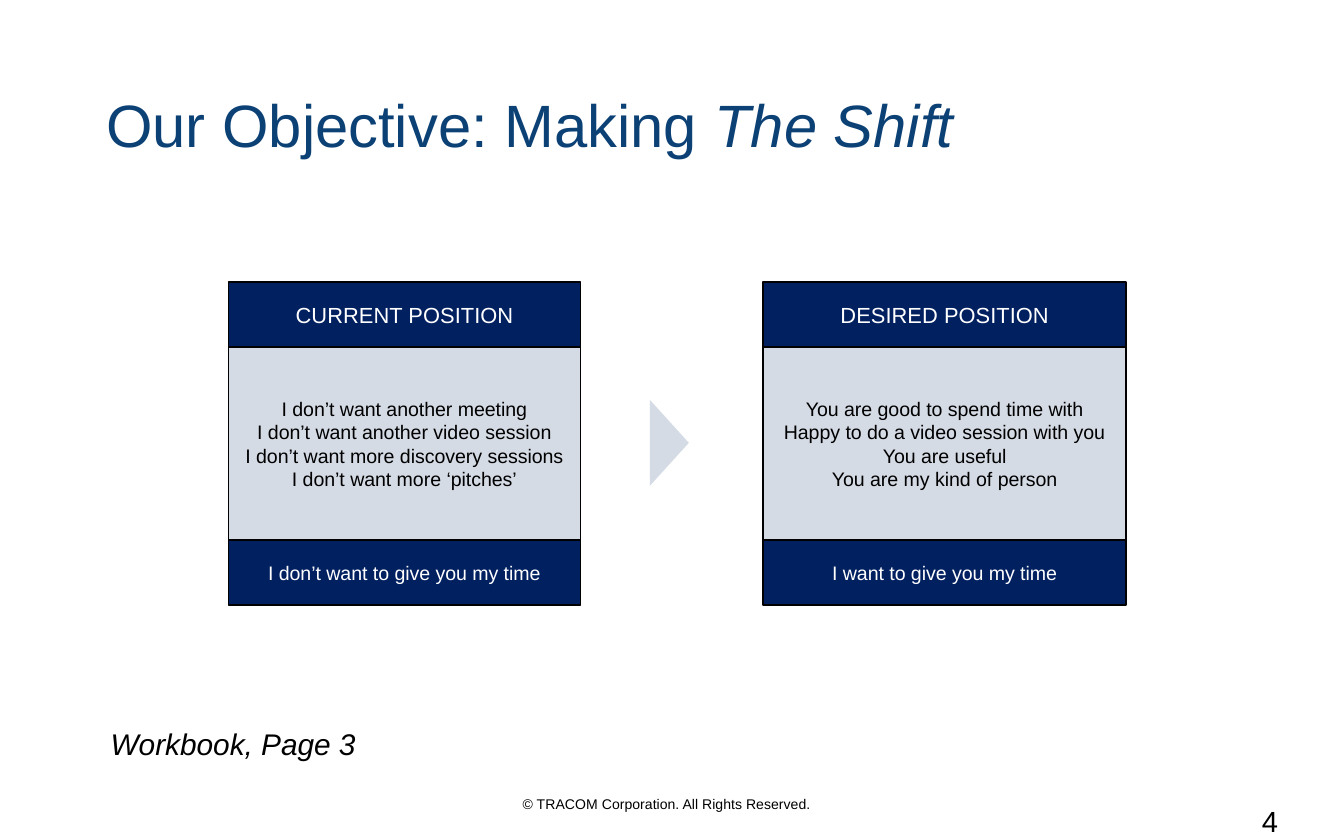
from pptx import Presentation
from pptx import util as u
from pptx.dml.color import RGBColor
from pptx.enum import shapes, text

WIDE, HIGH = 10, 6.25
HUES = {"title": "0C4176", "navy": "002060", "pale": "D5DBE5",
        "ink": "000000", "white": "FFFFFF"}
ROWS = (1, 3, 1)  # shares of a card: head, body, foot
CARDS = (
    ((1.7, 2.1, 2.62, 2.4),
     ("CURRENT POSITION",
      "I don’t want another meeting\n"
      "I don’t want another video session\n"
      "I don’t want more discovery sessions\n"
      "I don’t want more ‘pitches’",
      "I don’t want to give you my time")),
    ((5.68, 2.1, 2.7, 2.4),
     ("DESIRED POSITION",
      "You are good to spend time with\n"
      "Happy to do a video session with you\n"
      "You are useful\n"
      "You are my kind of person",
      "I want to give you my time")),
)


def hue(name):
    return RGBColor.from_string(HUES[name])


def place(box):
    return [u.Inches(n) for n in box]


def style(frame, size, color, align=text.PP_ALIGN.CENTER, italic=None):
    for para in frame.paragraphs:
        para.alignment = align
        for run in para.runs:
            font = run.font
            font.name, font.size = "Arial", u.Pt(size)
            font.color.rgb = hue(color)
            if italic is not None:
                font.italic = italic


def add_title(slide, box):
    title = slide.shapes.title
    title.left, title.top, title.width, title.height = place(box)
    frame = title.text_frame
    frame.vertical_anchor = text.MSO_ANCHOR.TOP
    frame.auto_size = text.MSO_AUTO_SIZE.NONE
    para = frame.paragraphs[0]
    para.text = "Our Objective: Making "
    para.add_run().text = "The Shift"
    style(frame, 32, "title", text.PP_ALIGN.LEFT)
    para.runs[1].font.italic = True


def add_label(slide, box, words, size, italic=None):
    frame = slide.shapes.add_textbox(*place(box)).text_frame
    frame.word_wrap = True
    frame.text = words
    style(frame, size, "ink", italic=italic)


def add_card(slide, box, parts):
    left, top, width, height = box
    group = slide.shapes.add_group_shape()
    looks = (("navy", "white", 11.7), ("pale", "ink", 10.5), ("navy", "white", 10.5))
    for share, words, (fill, color, size) in zip(ROWS, parts, looks):
        tall = height * share / sum(ROWS)
        cell = group.shapes.add_shape(shapes.MSO_SHAPE.RECTANGLE,
                                      *place((left, top, width, tall)))
        top += tall
        cell.shadow.inherit = False
        cell.fill.solid()
        cell.fill.fore_color.rgb = hue(fill)
        cell.line.color.rgb = hue("ink")
        cell.line.width = u.Pt(1)
        frame = cell.text_frame
        frame.word_wrap = True
        frame.vertical_anchor = text.MSO_ANCHOR.MIDDLE
        frame.margin_left = frame.margin_right = u.Inches(0.07)
        frame.margin_top = frame.margin_bottom = u.Inches(0.04)
        frame.text = words
        style(frame, size, color)


def add_arrow(slide, box):
    arrow = slide.shapes.add_shape(shapes.MSO_SHAPE.ISOSCELES_TRIANGLE, *place(box))
    arrow.rotation = 90
    arrow.shadow.inherit = False
    arrow.fill.solid()
    arrow.fill.fore_color.rgb = hue("pale")
    arrow.line.fill.background()


def main():
    deck = Presentation()
    deck.slide_width, deck.slide_height = place((WIDE, HIGH))
    slide = deck.slides.add_slide(deck.slide_layouts[5])

    # Title and the two positions, with the shift between them
    add_title(slide, (0.69, 0.6, 8.72, 1.06))
    for box, parts in CARDS:
        add_card(slide, box, parts)
    add_arrow(slide, (4.66, 3.15, 0.64, 0.29))

    # Workbook note, copyright line and page number
    add_label(slide, (0.61, 5.35, 2.25, 0.37), "Workbook, Page 3", 16, True)
    add_label(slide, (3.26, 5.87, 3.4, 0.23),
              "© TRACOM Corporation. All Rights Reserved.", 7.5)
    add_label(slide, (9.07, 5.93, 0.76, 0.33), "4", 15.6)

    deck.save("out.pptx")


if __name__ == "__main__":
    main()
